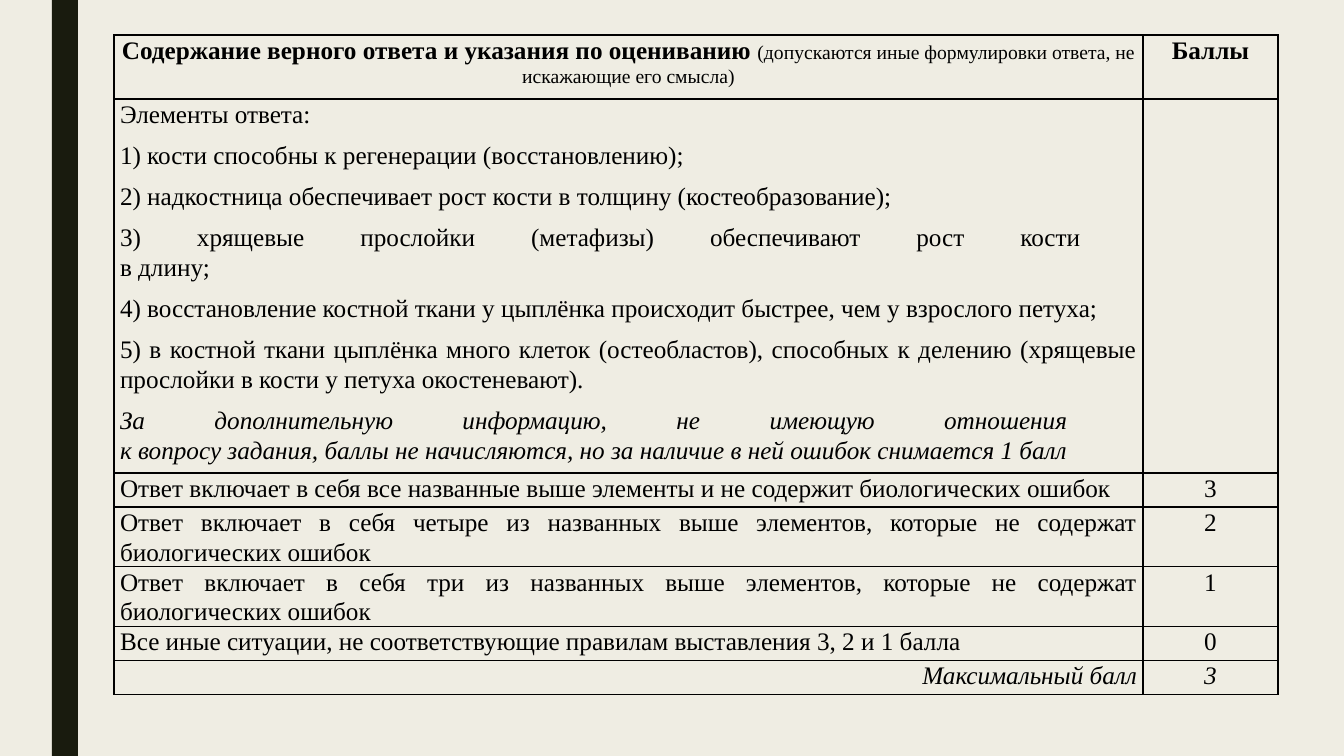
from lxml.etree import SubElement
from pptx import Presentation
from pptx.dml.color import RGBColor
from pptx.enum.shapes import MSO_SHAPE
from pptx.enum.text import PP_ALIGN
from pptx.oxml.ns import qn
from pptx.util import Emu, Pt

COLORS = {"paper": "EFEDE3", "bar": "191B0E", "ink": "000000"}
FONT = "Times New Roman"
SLIDE_BOX = (0, 0, 1344, 756)
BAR_BOX = (52, 0, 26, 756)
TABLE_BOX = (114, 35, 1164, 608)
SCORE_WIDTH = 135
HEADER_HEIGHT, ANSWER_HEIGHT, SCORE_HEIGHT = 64, 374, 34
SIDE_MARGIN = 6

HEADER = "Содержание верного ответа и указания по оцениванию "
HEADER_NOTE = "(допускаются иные формулировки ответа, не искажающие его смысла)"
ANSWER = [
    "Элементы ответа:",
    "1) кости способны к регенерации (восстановлению);",
    "2) надкостница обеспечивает рост кости в толщину (костеобразование);",
    "3) хрящевые прослойки (метафизы) обеспечивают рост кости \nв длину;",
    "4) восстановление костной ткани у цыплёнка происходит быстрее, чем у взрослого петуха; ",
    "5) в костной ткани цыплёнка много клеток (остеобластов), способных к делению "
    "(хрящевые прослойки в кости у петуха окостеневают).",
]
ANSWER_NOTE = (
    "За дополнительную информацию, не имеющую отношения \nк вопросу задания, "
    "баллы не начисляются, но за наличие в ней ошибок снимается 1 балл"
)
SCORES = [
    ("Ответ включает в себя все названные выше элементы и не содержит биологических ошибок", "3"),
    ("Ответ включает в себя четыре из названных выше элементов, "
     "которые не содержат биологических ошибок", "2"),
    ("Ответ включает в себя три из названных выше элементов, "
     "которые не содержат биологических ошибок", "1"),
    ("Все иные ситуации, не соответствующие правилам выставления 3, 2 и 1 балла", "0"),
]
TOTAL = ("Максимальный балл", "3")


def px(length):
    return Emu(round(length * 914400 / 100.8))


def color(name):
    return RGBColor.from_string(COLORS[name])


def draw_bar(page, box):
    bar = page.shapes.add_shape(MSO_SHAPE.RECTANGLE, *map(px, box))
    bar.shadow.inherit = False
    bar.fill.solid()
    bar.fill.fore_color.rgb = color("bar")
    bar.line.fill.background()


def frame_cell(cell):
    """Give the cell thin borders, narrow margins and no fill."""
    cell.margin_left = cell.margin_right = px(SIDE_MARGIN)
    cell.margin_top = cell.margin_bottom = 0
    properties = cell._tc.get_or_add_tcPr()
    for side in ("a:lnL", "a:lnR", "a:lnT", "a:lnB"):
        line = SubElement(properties, qn(side), w=str(Pt(1)))
        SubElement(SubElement(line, qn("a:solidFill")), qn("a:srgbClr"), val=COLORS["ink"])
    cell.fill.background()


def write(para, text, align, bold=False, italic=False):
    para.text = text
    para.alignment = align
    para.line_spacing = 1.07
    para.space_after = Pt(8)
    font = para.font
    font.name, font.size = FONT, Pt(18)
    font.bold, font.italic = bold, italic
    font.color.rgb = color("ink")


def write_cell(cell, text, align, **style):
    write(cell.text_frame.paragraphs[0], text, align, **style)


def fill_header(row):
    criteria, points = row.cells
    write_cell(criteria, HEADER, PP_ALIGN.CENTER)
    para = criteria.text_frame.paragraphs[0]
    para.runs[0].font.bold = True
    note = para.add_run()
    note.text = HEADER_NOTE
    note.font.size = Pt(14)
    write_cell(points, "Баллы", PP_ALIGN.CENTER, bold=True)


def fill_answer(row):
    frame = row.cells[0].text_frame
    write(frame.paragraphs[0], ANSWER[0], PP_ALIGN.JUSTIFY)
    for text in ANSWER[1:]:
        write(frame.add_paragraph(), text, PP_ALIGN.JUSTIFY)
    write(frame.add_paragraph(), ANSWER_NOTE, PP_ALIGN.JUSTIFY, italic=True)


def fill_score(row, texts, align, italic=False):
    for cell, text, side in zip(row.cells, texts, (align, PP_ALIGN.CENTER)):
        write_cell(cell, text, side, italic=italic)


def draw_scoring_table(page, box):
    heights = [HEADER_HEIGHT, ANSWER_HEIGHT] + [SCORE_HEIGHT] * (len(SCORES) + 1)
    table = page.shapes.add_table(len(heights), 2, *map(px, box)).table
    table.first_row = table.horz_banding = False
    table.columns[0].width = px(box[2] - SCORE_WIDTH)
    table.columns[1].width = px(SCORE_WIDTH)
    for row, height in zip(table.rows, heights):
        row.height = px(height)
    for cell in table.iter_cells():
        frame_cell(cell)

    header, answer, *scores, total = table.rows
    fill_header(header)
    fill_answer(answer)
    for row, texts in zip(scores, SCORES):
        fill_score(row, texts, PP_ALIGN.JUSTIFY)
    fill_score(total, TOTAL, PP_ALIGN.RIGHT, italic=True)


def main():
    deck = Presentation()
    deck.slide_width, deck.slide_height = map(px, SLIDE_BOX[2:])
    page = deck.slides.add_slide(deck.slide_layouts[6])
    page.background.fill.solid()
    page.background.fill.fore_color.rgb = color("paper")
    draw_bar(page, BAR_BOX)
    draw_scoring_table(page, TABLE_BOX)
    deck.save("out.pptx")


if __name__ == "__main__":
    main()
